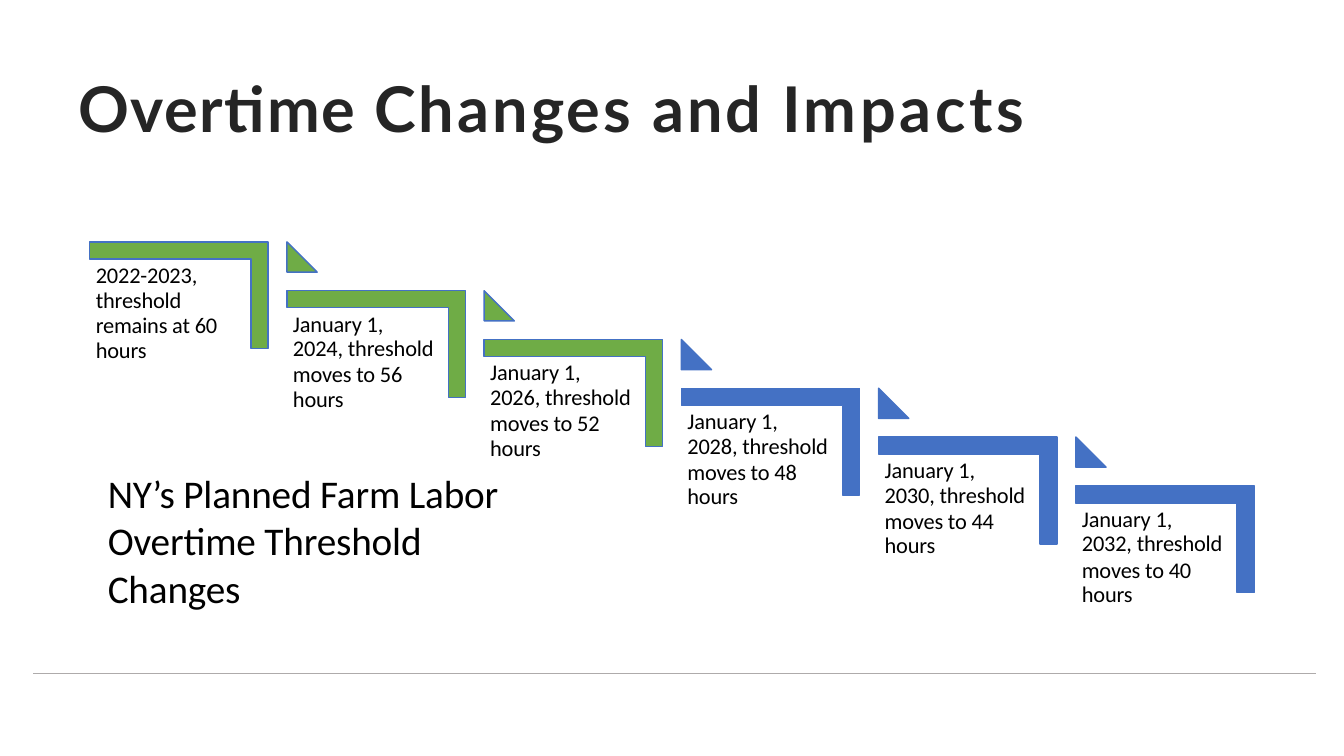
from dataclasses import dataclass

from lxml.etree import SubElement
from pptx import Presentation
from pptx.dml.color import RGBColor
from pptx.enum.shapes import MSO_CONNECTOR as Connector
from pptx.enum.text import MSO_ANCHOR as Anchor, MSO_AUTO_SIZE as AutoSize, PP_ALIGN as Align
from pptx.oxml.ns import qn
from pptx.util import Inches, Length, Pt

GREEN, BLUE, BLACK = "6FAC46", "4471C4", "000000"
FIRST_LEFT, FIRST_TOP = 0.89, 2.4
STEP_RIGHT, STEP_DOWN = 9.78 / 5, 2.42 / 5
BRACKET_WIDTH, BRACKET_HEIGHT, BAR = 1.77, 1.06, 0.17
TRIANGLE = 0.3


@dataclass
class Run:
    text: str
    spacing: float = -0.1


@dataclass
class Line:
    runs: list[Run]
    line_spacing: Length | float = 1.0
    space_before: Length = Pt(0)


@dataclass
class Step:
    lines: list[Line]
    color: str
    label_width: float = 1.45


def colour(value: str) -> RGBColor:
    return RGBColor.from_string(value)


def set_all(target, values: dict) -> None:
    for name, value in values.items():
        setattr(target, name, value)


def write_lines(frame, lines: list[Line], font_values: dict, color: str, top: float = 0.01) -> None:
    set_all(frame, dict(word_wrap=True, auto_size=AutoSize.NONE, vertical_anchor=Anchor.TOP,
                        margin_left=Inches(0.01), margin_top=Inches(top),
                        margin_right=0, margin_bottom=0))
    for index, line in enumerate(lines):
        paragraph = frame.add_paragraph() if index else frame.paragraphs[0]
        set_all(paragraph, dict(alignment=Align.LEFT, line_spacing=line.line_spacing,
                                space_before=line.space_before))
        for part in line.runs:
            run = paragraph.add_run()
            run.text = part.text
            set_all(run.font, font_values)
            run.font.color.rgb = colour(color)
            run.font._element.set("spc", str(round(part.spacing * 100)))


def add_text(slide, box: tuple, lines: list[Line], size: int) -> None:
    shape = slide.shapes.add_textbox(*map(Inches, box))
    write_lines(shape.text_frame, lines, dict(name="Calibri", size=Pt(size)), BLACK)


def add_outline(slide, left: float, top: float, offsets: list[tuple], color: str) -> None:
    points = [(Inches(left + x), Inches(top + y)) for x, y in offsets]
    builder = slide.shapes.build_freeform(*points[0])
    builder.add_line_segments(points[1:], close=True)
    shape = builder.convert_to_shape()
    shape.shadow.inherit = False
    shape.fill.solid()
    shape.fill.fore_color.rgb = colour(color)
    shape.line.color.rgb = colour(BLUE)
    shape.line.width = Pt(1)


def add_step(slide, index: int, step: Step) -> None:
    left = FIRST_LEFT + index * STEP_RIGHT
    top = FIRST_TOP + index * STEP_DOWN
    inner = BRACKET_WIDTH - BAR
    bracket = [(0, 0), (BRACKET_WIDTH, 0), (BRACKET_WIDTH, BRACKET_HEIGHT),
               (inner, BRACKET_HEIGHT), (inner, BAR), (0, BAR)]
    add_outline(slide, left, top, bracket, step.color)
    if index:
        triangle = [(0, 0), (TRIANGLE, TRIANGLE), (0, TRIANGLE)]
        add_outline(slide, left, top - STEP_DOWN, triangle, step.color)
    add_text(slide, (left + 0.05, top + 0.19, step.label_width, 1.03), step.lines, 16)


def yearly_step(year: int, hours: int, color: str) -> Step:
    return Step([Line([Run("January 1,")], Pt(18.4)),
                 Line([Run(f"{year}, threshold")], Pt(17.6)),
                 Line([Run(f"moves to {hours} hours")], Pt(17.5), Pt(1.2))], color)


def add_title(slide) -> None:
    title = slide.shapes.title
    set_all(title, dict(left=Inches(0.77), top=Inches(0.15),
                        width=Inches(11.79), height=Inches(1.33)))
    runs = [Run("Overtime ", 1.1), Run("Changes ", 2.2), Run("and ", 1.9), Run("Impacts", 2.6)]
    write_lines(title.text_frame, [Line(runs)],
                dict(name="Lato", size=Pt(45), bold=True), "252525", 0.54)


def add_footer_rule(slide) -> None:
    rule = slide.shapes.add_connector(Connector.STRAIGHT, Inches(0.33), Inches(6.68),
                                      Inches(13.05), Inches(6.68))
    rule.line.color.rgb = colour("AEABAB")
    rule.line.width = Pt(0.5)
    SubElement(rule._element.spPr, qn("a:effectLst"))


def main() -> None:
    presentation = Presentation()
    presentation.slide_width = Inches(13.33)
    presentation.slide_height = Inches(7.5)
    slide = presentation.slides.add_slide(presentation.slide_layouts[5])
    add_footer_rule(slide)
    add_title(slide)
    first = Step([Line([Run("2022-2023,")], Pt(18.4)),
                  Line([Run("threshold remains at 60 hours")], 0.92, Pt(0.8))], GREEN, 1.25)
    later = [yearly_step(2024 + 2 * index, 56 - 4 * index, GREEN if index < 2 else BLUE)
             for index in range(5)]
    for index, step in enumerate([first, *later]):
        add_step(slide, index, step)
    caption = Line([Run("NY’s Planned Farm Labor Overtime Threshold Changes")])
    add_text(slide, (1.06, 4.65, 3.94, 1.43), [caption], 28)
    presentation.save("out.pptx")


if __name__ == "__main__":
    main()
